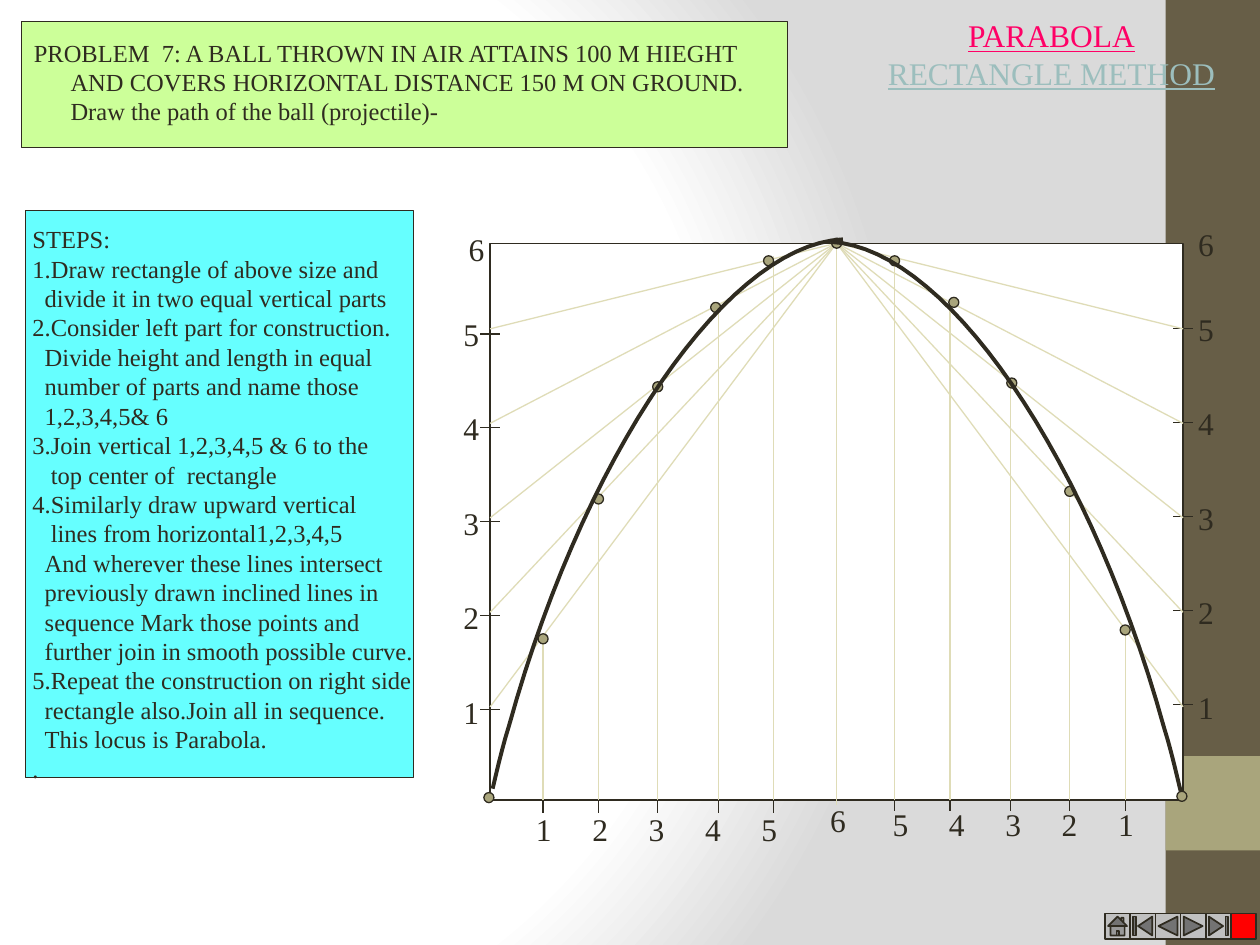
from dataclasses import dataclass

from lxml import etree
from pptx import Presentation
from pptx.dml.color import RGBColor
from pptx.enum import shapes, text
from pptx.oxml import parse_xml
from pptx.oxml.ns import nsdecls, qn
from pptx.util import Inches, Pt

INK = RGBColor(0x2F, 0x2B, 0x20)
OLIVE = RGBColor(0x67, 0x5E, 0x47)
SAGE = RGBColor(0xA9, 0xA5, 0x7C)
CREAM = RGBColor(0xDF, 0xDC, 0xB7)
WHITE = RGBColor(0xFF, 0xFF, 0xFF)
PINK = RGBColor(0xFF, 0x00, 0x66)
TEAL = RGBColor(0x9C, 0xBE, 0xBD)
LIME = RGBColor(0xCC, 0xFF, 0x99)
AQUA = RGBColor(0x66, 0xFF, 0xFF)
SILVER = RGBColor(0xC0, 0xC0, 0xC0)
RED = RGBColor(0xFF, 0x00, 0x00)

KIND = shapes.MSO_SHAPE
SPACE_PER_POINT = 0.25  # width of a space in the serif face

# Each line is (leading indent in spaces, wording)
PROBLEM = [
    (0, "PROBLEM  7: A BALL THROWN IN AIR ATTAINS 100 M HIEGHT"),
    (6, "AND COVERS HORIZONTAL DISTANCE 150 M ON GROUND."),
    (6, "Draw the path of the ball (projectile)-"),
]
STEPS = [
    (0, "STEPS:"),
    (0, "1.Draw rectangle of above size and"),
    (2, "divide it in two equal vertical parts"),
    (0, "2.Consider left part for construction."),
    (2, "Divide height and length in equal"),
    (2, "number of parts and name those"),
    (2, "1,2,3,4,5& 6"),
    (0, "3.Join vertical 1,2,3,4,5 & 6 to the"),
    (3, "top center of  rectangle"),
    (0, "4.Similarly draw upward vertical"),
    (3, "lines from horizontal1,2,3,4,5"),
    (2, "And wherever these lines intersect"),
    (2, "previously drawn inclined lines in"),
    (2, "sequence Mark those points and"),
    (2, "further join in smooth possible curve."),
    (0, "5.Repeat the construction on right side"),
    (2, "rectangle also.Join all in sequence."),
    (2, "This locus is Parabola."),
    (0, "."),
]


@dataclass
class Box:
    left: float
    top: float
    width: float
    height: float

    def inches(self):
        return [Inches(v) for v in (self.left, self.top, self.width, self.height)]


@dataclass
class Half:
    """One side of the construction, measured inwards from its outer edge."""
    edge: float
    inward: int
    shift: float       # added to every column
    lift: float        # taken from every height
    label_left: float  # height labels, from the edge
    six_left: float
    dots: list

    def x(self, distance):
        return self.edge + self.inward * distance


def add_block(page, box, fill, line=None, width=0.75, kind=KIND.RECTANGLE):
    block = page.shapes.add_shape(kind, *box.inches())
    block.shadow.inherit = False
    block.fill.solid()
    block.fill.fore_color.rgb = fill
    if line is None:
        block.line.fill.background()
    else:
        block.line.color.rgb = line
        block.line.width = Pt(width)


def add_line(page, start, end, colour):
    line = page.shapes.add_connector(
        shapes.MSO_CONNECTOR.STRAIGHT, *[Inches(v) for v in (*start, *end)])
    line.line.color.rgb = colour
    line.line.width = Pt(0.75)
    etree.SubElement(line.element.spPr, qn("a:effectLst"))


def add_dot(page, x, y):
    add_block(page, Box(x - 0.04, y - 0.04, 0.08, 0.08), SAGE, INK, kind=KIND.OVAL)


def write_para(para, words, size, colour=INK, underline=None):
    span = para.add_run()
    span.text = words
    span.font.color.rgb = colour
    values = {"name": "Times New Roman", "size": Pt(size), "underline": underline}
    for key, value in values.items():
        setattr(span.font, key, value)


def add_text(page, box, lines, size):
    frame = page.shapes.add_textbox(*box.inches()).text_frame
    frame.word_wrap = False
    for index, (spaces, words) in enumerate(lines):
        para = frame.add_paragraph() if index else frame.paragraphs[0]
        if spaces:
            margin = Pt(spaces * SPACE_PER_POINT * size)
            para._p.get_or_add_pPr().set("marL", str(margin))
        write_para(para, words, size)


def add_number(page, left, top, number):
    add_text(page, Box(left, top, 0.31, 0.37), [(0, str(number))], 18)


def draw_background(page, box):
    page.background.fill.gradient()
    gradient = page.element.find(".//" + qn("a:gradFill"))
    stops = "".join(
        f'<a:gs pos="{position}"><a:srgbClr val="{colour}"/></a:gs>'
        for position, colour in ((0, WHITE), (75000, WHITE), (100000, "DADADA")))
    gradient.getparent().replace(gradient, parse_xml(
        f'<a:gradFill {nsdecls("a")} rotWithShape="1"><a:gsLst>{stops}</a:gsLst>'
        '<a:path path="circle"><a:fillToRect l="20000" t="50000" r="100000" b="50000"/>'
        '</a:path></a:gradFill>'))
    # Side band with its lighter square
    add_block(page, box, OLIVE)
    add_block(page, Box(box.left, box.top + 6, box.width, 0.75), SAGE)


def draw_half(page, box, half, apex):
    columns = [0.42, 0.86, 1.33, 1.81, 2.25]
    drop_tops = [3.10, 2.02, 1.10, 0.52, 0.10]
    for i, (column, drop_top) in enumerate(zip(columns, drop_tops)):
        x = half.x(column + half.shift)
        # Height tick, number and ray to the apex
        tick = box.top + 3.7 - half.lift - 0.745 * i
        add_line(page, (half.edge - 0.08, tick), (half.edge + 0.08, tick), INK)
        add_number(page, half.edge + half.label_left,
                   box.top + 3.52 - half.lift - 0.75 * i, i + 1)
        add_line(page, (half.edge, box.top + 3.68 - 0.75 * i), apex, CREAM)
        # Length tick, number and upright
        base = box.top + 4.35 - half.lift / 4
        add_line(page, (x, base), (x, base + 0.17), INK)
        centre = half.x(0.42 + half.shift + 0.4475 * i)
        add_number(page, centre - 0.155, box.top + 4.45 - half.lift, i + 1)
        add_line(page, (x, box.top + box.height), (x, box.top + drop_top), CREAM)
    add_number(page, half.edge + half.six_left, box.top - 0.15 - half.lift, 6)
    # Points on the locus
    for distance, drop in half.dots:
        add_dot(page, half.x(distance), box.top + drop)


def cubic(p0, p1, p2, p3, steps=30):
    for step in range(steps + 1):
        t = step / steps
        s = 1 - t
        yield tuple(s**3 * a + 3 * s * s * t * b + 3 * s * t * t * c + t**3 * d
                    for a, b, c, d in zip(p0, p1, p2, p3))


def draw_curve(page, apex, outward, lift):
    main = cubic((-0.05, -0.01), (0.86, 0.03), (2.0, 1.68), (2.6, 3.85))
    foot = cubic((2.6, 3.85), (2.65, 4.01), (2.69, 4.18), (2.73, 4.35), 5)
    points = [(Inches(apex[0] + outward * x), Inches(apex[1] + y - lift))
              for x, y in (*main, *foot)]
    builder = page.shapes.build_freeform(*points[0])
    builder.add_line_segments(points[1:], close=False)
    curve = builder.convert_to_shape()
    curve.shadow.inherit = False
    curve.fill.background()
    curve.line.color.rgb = INK
    curve.line.width = Pt(2.25)


def draw_construction(page, box):
    apex = (box.left + box.width / 2, box.top)
    add_block(page, box, WHITE, INK)
    add_line(page, (apex[0], box.top + 4.46), apex, CREAM)
    left = Half(box.left, 1, 0, 0, -0.31, -0.27,
                [(-0.01, 4.4), (0.42, 3.14), (0.86, 2.03), (1.33, 1.14),
                 (1.79, 0.51), (2.21, 0.14)])
    right = Half(box.left + box.width, -1, 0.04, 0.04, 0.02, 0.02,
                 [(0.01, 4.39), (0.46, 3.07), (0.9, 1.97), (1.36, 1.11),
                  (1.82, 0.47), (2.29, 0.14)])
    for half in (left, right):
        draw_half(page, box, half, apex)
    add_number(page, apex[0] - 0.15, box.top + 4.38, 6)
    add_dot(page, *apex)
    draw_curve(page, apex, 1, 0)
    draw_curve(page, apex, -1, 0.02)


def draw_title(page, box):
    title = page.shapes.title
    title.left, title.top, title.width, title.height = box.inches()
    frame = title.text_frame
    values = {"word_wrap": False, "auto_size": text.MSO_AUTO_SIZE.NONE,
              "vertical_anchor": text.MSO_ANCHOR.TOP}
    for key, value in values.items():
        setattr(frame, key, value)
    for para, words, colour in ((frame.paragraphs[0], "PARABOLA", PINK),
                                (frame.add_paragraph(), "RECTANGLE METHOD", TEAL)):
        para.alignment = text.PP_ALIGN.CENTER
        write_para(para, words, 18, colour, True)
    # Bring the title in front of the side band
    title.element.getparent().append(title.element)


def draw_note(page, box, fill, lines, text_box):
    add_block(page, box, fill, INK)
    add_text(page, text_box, lines, 14)


def draw_navigation(page, box):
    kinds = [KIND.ACTION_BUTTON_HOME, KIND.ACTION_BUTTON_BEGINNING,
             KIND.ACTION_BUTTON_BACK_OR_PREVIOUS, KIND.ACTION_BUTTON_FORWARD_OR_NEXT,
             KIND.ACTION_BUTTON_END, KIND.ACTION_BUTTON_CUSTOM]
    side = box.width / len(kinds)
    for i, kind in enumerate(kinds):
        fill = RED if kind == KIND.ACTION_BUTTON_CUSTOM else SILVER
        add_block(page, Box(box.left + i * side, box.top, side, box.height),
                  fill, INK, 1, kind)


def main():
    deck = Presentation()
    deck.slide_width, deck.slide_height = Inches(10), Inches(7.5)
    page = deck.slides.add_slide(deck.slide_layouts.get_by_name("Title Only"))
    draw_background(page, Box(9.25, 0, 0.75, 7.5))
    draw_construction(page, Box(3.89, 1.93, 5.5, 4.42))
    draw_title(page, Box(6.85, 0.08, 2.99, 0.7))
    draw_note(page, Box(0.17, 0.17, 6.08, 1), LIME, PROBLEM, Box(0.17, 0.25, 5.94, 0.8))
    draw_note(page, Box(0.2, 1.67, 3.08, 4.5), AQUA, STEPS, Box(0.16, 1.73, 3.26, 4.52))
    draw_navigation(page, Box(8.77, 7.25, 1.2, 0.2))
    deck.save("out.pptx")


if __name__ == "__main__":
    main()
